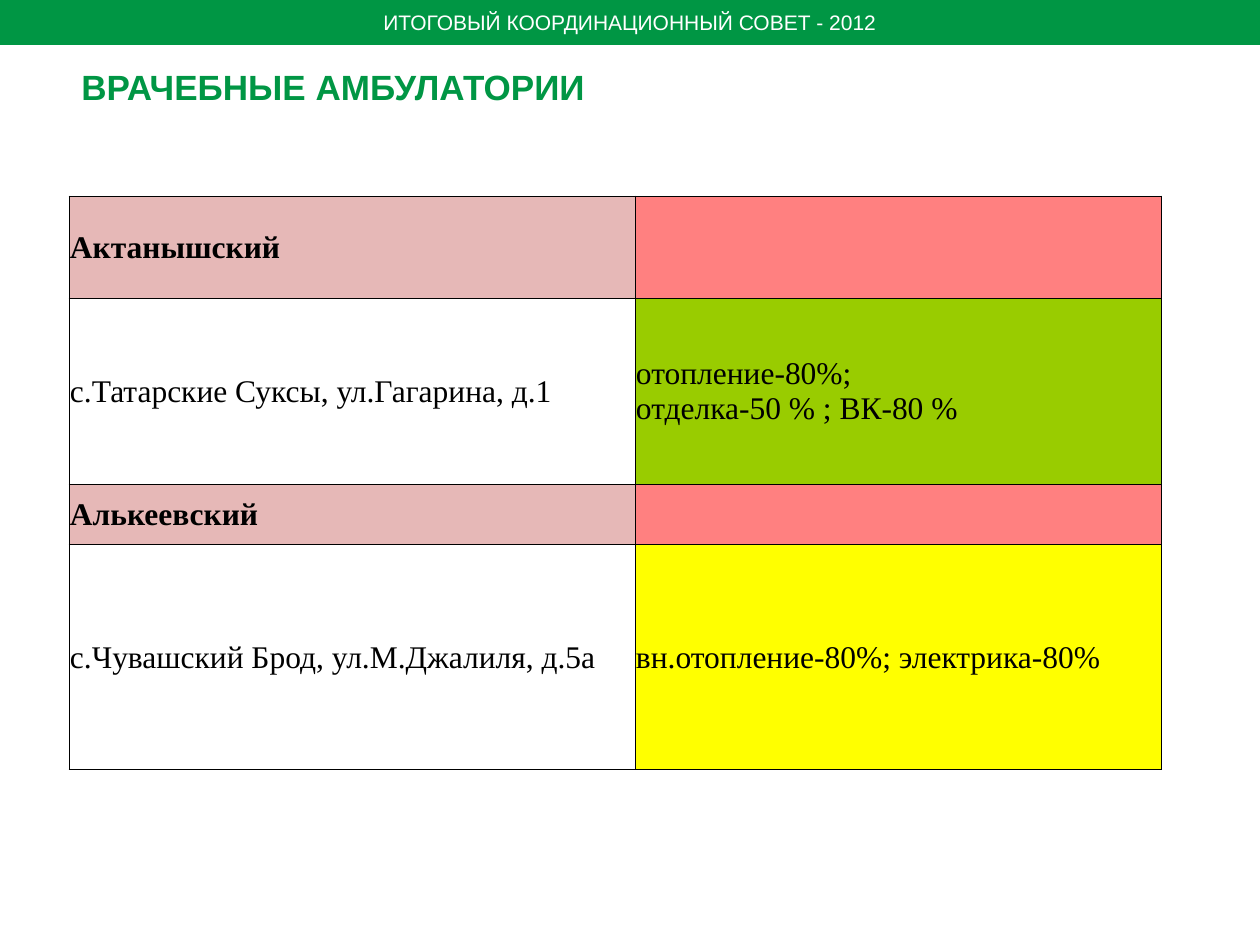
from lxml.etree import SubElement
from pptx import Presentation
from pptx.dml.color import RGBColor
from pptx.enum.shapes import MSO_SHAPE
from pptx.enum.text import MSO_ANCHOR, PP_ALIGN
from pptx.oxml.ns import qn
from pptx.util import Emu, Pt

GREEN, WHITE, BLACK = "009644", "FFFFFF", "000000"
ROSE, CORAL, LIME, YELLOW = "E6B8B7", "FF8080", "99CC00", "FFFF00"


def px(length):
    return Emu(round(length * 914400 / 126))


def color(hex_code):
    return RGBColor.from_string(hex_code)


class ClinicSlide:
    """Holds the style and the slide, and draws each kind of element."""

    heading_font = "Arial"
    table_font = "Times New Roman"

    def __init__(self, deck):
        self.slide = deck.slides.add_slide(deck.slide_layouts[6])

    def set_text(self, frame, lines, font, size, hex_code, align=None, bold=False):
        frame.text = "\n".join(lines)
        for paragraph in frame.paragraphs:
            paragraph.alignment = align
            paragraph.font.name = font
            paragraph.font.size = Pt(size)
            paragraph.font.bold = bold
            paragraph.font.color.rgb = color(hex_code)

    def banner(self, text, left, top, width, height):
        band = self.slide.shapes.add_shape(
            MSO_SHAPE.RECTANGLE, px(left), px(top), px(width), px(height))
        band.shadow.inherit = False
        band.fill.solid()
        band.fill.fore_color.rgb = color(GREEN)
        band.line.fill.background()
        band.text_frame.word_wrap = False
        band.text_frame.vertical_anchor = MSO_ANCHOR.MIDDLE
        self.set_text(band.text_frame, [text], self.heading_font, 12, WHITE, PP_ALIGN.CENTER)

    def title(self, text, left, top, width, height):
        heading = self.slide.shapes.add_textbox(px(left), px(top), px(width), px(height))
        heading.text_frame.word_wrap = True
        self.set_text(heading.text_frame, [text], self.heading_font, 20, GREEN, bold=True)

    def borders(self, cell):
        properties = cell._tc.get_or_add_tcPr()
        for side in ("a:lnL", "a:lnR", "a:lnT", "a:lnB"):
            edge = SubElement(properties, qn(side), w=str(Pt(0.5)))
            SubElement(SubElement(edge, qn("a:solidFill")), qn("a:srgbClr"), val=BLACK)

    def cell(self, cell, lines, fill, bold):
        self.borders(cell)
        if fill:
            cell.fill.solid()
            cell.fill.fore_color.rgb = color(fill)
        else:
            cell.fill.background()
        cell.vertical_anchor = MSO_ANCHOR.MIDDLE
        cell.margin_left = cell.margin_right = cell.margin_top = px(1)
        cell.margin_bottom = 0
        self.set_text(cell.text_frame, lines, self.table_font, 18, BLACK, PP_ALIGN.JUSTIFY, bold)

    def table(self, rows, left, top, widths, heights):
        grid = self.slide.shapes.add_table(
            len(heights), len(widths), px(left), px(top),
            px(sum(widths)), px(sum(heights))).table
        grid.first_row = grid.horz_banding = False
        for column, width in zip(grid.columns, widths):
            column.width = px(width)
        for row, height, (place, works, fills, bold) in zip(grid.rows, heights, rows):
            row.height = px(height)
            for cell, lines, fill in zip(row.cells, ([place], works), fills):
                self.cell(cell, lines, fill, bold)


def main():
    deck = Presentation()
    deck.slide_width, deck.slide_height = px(1260), px(945)
    clinics = ClinicSlide(deck)
    clinics.banner("ИТОГОВЫЙ КООРДИНАЦИОННЫЙ СОВЕТ - 2012", 0, 0, 1260, 45)
    district = (ROSE, CORAL)
    rows = [
        ("Актанышский", [], district, True),
        ("с.Татарские Суксы, ул.Гагарина, д.1",
         ["отопление-80%; ", "отделка-50 % ; ВК-80 %"], (None, LIME), False),
        ("Алькеевский", [], district, True),
        ("с.Чувашский Брод, ул.М.Джалиля, д.5а",
         ["вн.отопление-80%; электрика-80%"], (None, YELLOW), False),
    ]
    clinics.table(rows, 69, 196, [566, 526], [102, 186, 60, 226])
    clinics.title("ВРАЧЕБНЫЕ АМБУЛАТОРИИ", 69, 59, 1135, 146)
    deck.save("out.pptx")


if __name__ == "__main__":
    main()
